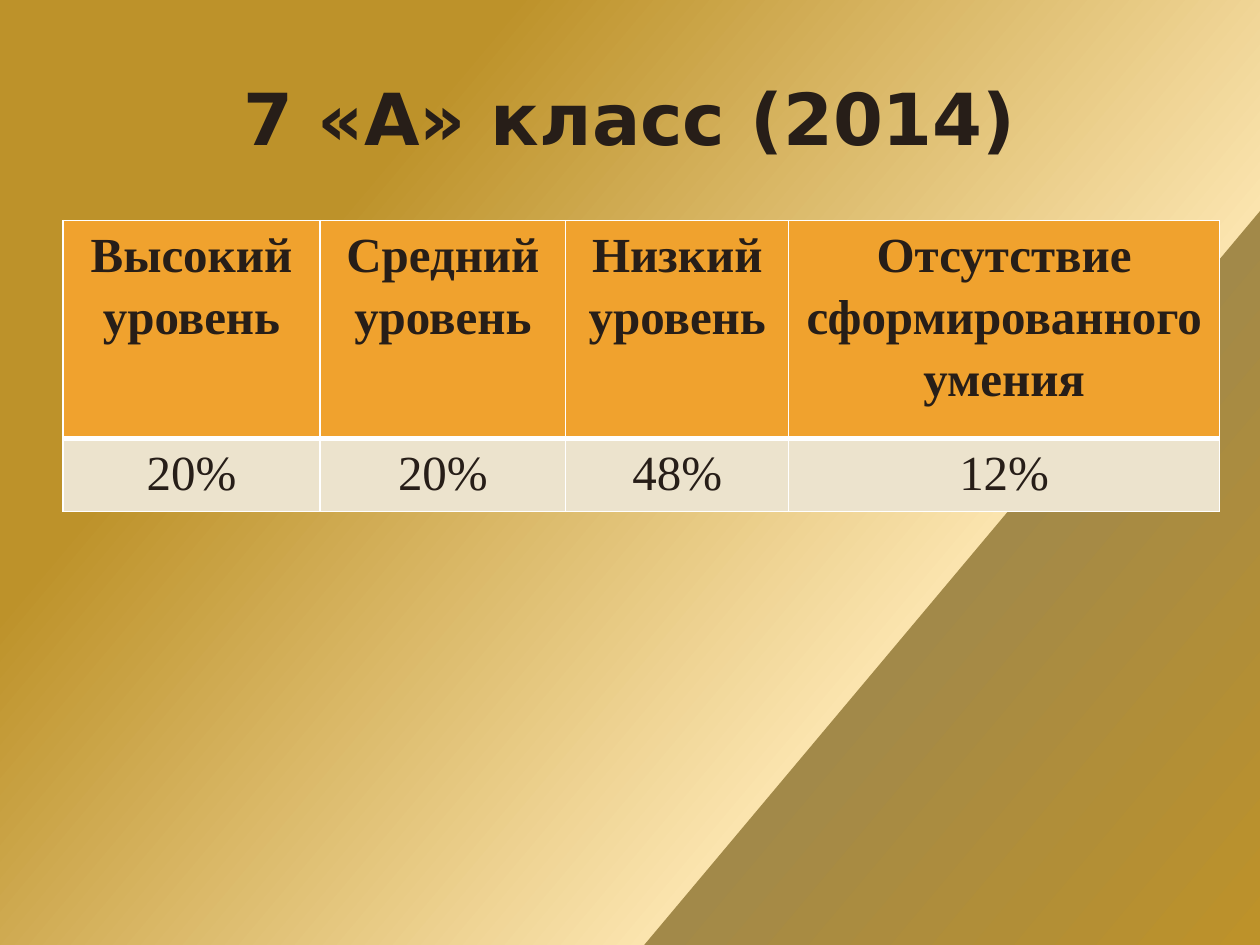
from lxml.etree import SubElement
from pptx import Presentation
from pptx.dml.color import RGBColor
from pptx.enum.text import MSO_ANCHOR as Anchor, PP_ALIGN as Align
from pptx.oxml.ns import qn
from pptx.util import Inches, Pt

COLORS = {"ink": "271E18", "header": "F0A22E", "body": "ECE3CD", "rule": "FFFFFF",
          "gold": "BD922A", "cream": "FBE4AE", "olive": "A28949"}
# Percent along the slope; two colours at 70 make the hard edge
SLOPE = [(0, "gold"), (25, "gold"), (70, "cream"), (70, "olive"), (100, "gold")]
SLOPE_ANGLE = 40

# Grid of the slide: 20 columns by 30 rows
COL, ROW = Inches(0.5), Inches(0.25)
TITLE_BOX = (1, 1.2, 18, 5)
TABLE_BOX = (1, 7, 18.36, 9.24)
LEVEL_COLUMNS = [4.08, 3.9, 3.54, 6.84]
LEVEL_ROWS = [6.92, 2.32]

TITLE_FONT = {"name": "DejaVu Sans", "size": Pt(41), "bold": True}
HEADER_FONT = {"name": "Times New Roman", "size": Pt(28), "bold": True}
SHARE_FONT = {**HEADER_FONT, "bold": False}
CELL_MARGINS = {"margin_left": Inches(0.07), "margin_right": Inches(0.07),
                "margin_top": 0, "margin_bottom": 0}

LEVELS = [
    ("Высокий уровень", "20%"),
    ("Средний уровень", "20%"),
    ("Низкий уровень", "48%"),
    ("Отсутствие сформированного умения", "12%"),
]


def rgb(name):
    return RGBColor.from_string(COLORS[name])


def place(box):
    left, top, width, height = box
    return int(left * COL), int(top * ROW), int(width * COL), int(height * ROW)


def set_all(target, values):
    for key, value in values.items():
        setattr(target, key, value)


def write(frame, text, font, spacing=1.0):
    paragraph = frame.paragraphs[0]
    set_all(paragraph, {"alignment": Align.CENTER, "line_spacing": spacing})
    run = paragraph.add_run()
    run.text = text
    set_all(run.font, font)
    run.font.color.rgb = rgb("ink")


def add_color(parent, name):
    return SubElement(parent, qn("a:srgbClr"), val=COLORS[name])


def paint_background(slide):
    fill = slide.background.fill
    fill.gradient()
    fill.gradient_angle = 360 - SLOPE_ANGLE
    stops = next(slide.element.iter(qn("a:gsLst")))
    for stop in list(stops):
        stops.remove(stop)
    for percent, name in SLOPE:
        add_color(SubElement(stops, qn("a:gs"), pos=str(percent * 1000)), name)


def add_title(slide, box, text):
    title = slide.shapes.add_textbox(*place(box)).text_frame
    set_all(title, {"word_wrap": True, "vertical_anchor": Anchor.MIDDLE})
    write(title, text, TITLE_FONT)


def add_borders(cell, widths):
    props = cell._tc.get_or_add_tcPr()
    for index, (side, points) in enumerate(widths.items()):
        line = SubElement(props, qn(f"a:ln{side}"), w=str(Pt(points)))
        add_color(SubElement(line, qn("a:solidFill")), "rule")
        props.insert(index, line)  # borders come before the fill


def add_levels_table(slide, box, levels):
    table = slide.shapes.add_table(2, len(levels), *place(box)).table
    for column, width in zip(table.columns, LEVEL_COLUMNS):
        column.width = int(width * COL)
    for row, height in zip(table.rows, LEVEL_ROWS):
        row.height = int(height * ROW)

    # Header over shares, parted by a thick rule
    row_styles = [("header", HEADER_FONT, {"T": 1, "B": 3}),
                  ("body", SHARE_FONT, {"T": 3, "B": 1})]
    for c, level in enumerate(levels):
        for r, (text, (color, font, rules)) in enumerate(zip(level, row_styles)):
            cell = table.cell(r, c)
            set_all(cell, CELL_MARGINS)
            cell.fill.solid()
            cell.fill.fore_color.rgb = rgb(color)
            add_borders(cell, {"L": 1, "R": 1, **rules})
            write(cell.text_frame, text, font, 1.15)


def main():
    deck = Presentation()
    set_all(deck, {"slide_width": 20 * COL, "slide_height": 30 * ROW})
    slide = deck.slides.add_slide(deck.slide_layouts[6])
    paint_background(slide)
    add_title(slide, TITLE_BOX, "7 «А» класс (2014)")
    add_levels_table(slide, TABLE_BOX, LEVELS)
    deck.save("out.pptx")


if __name__ == "__main__":
    main()
